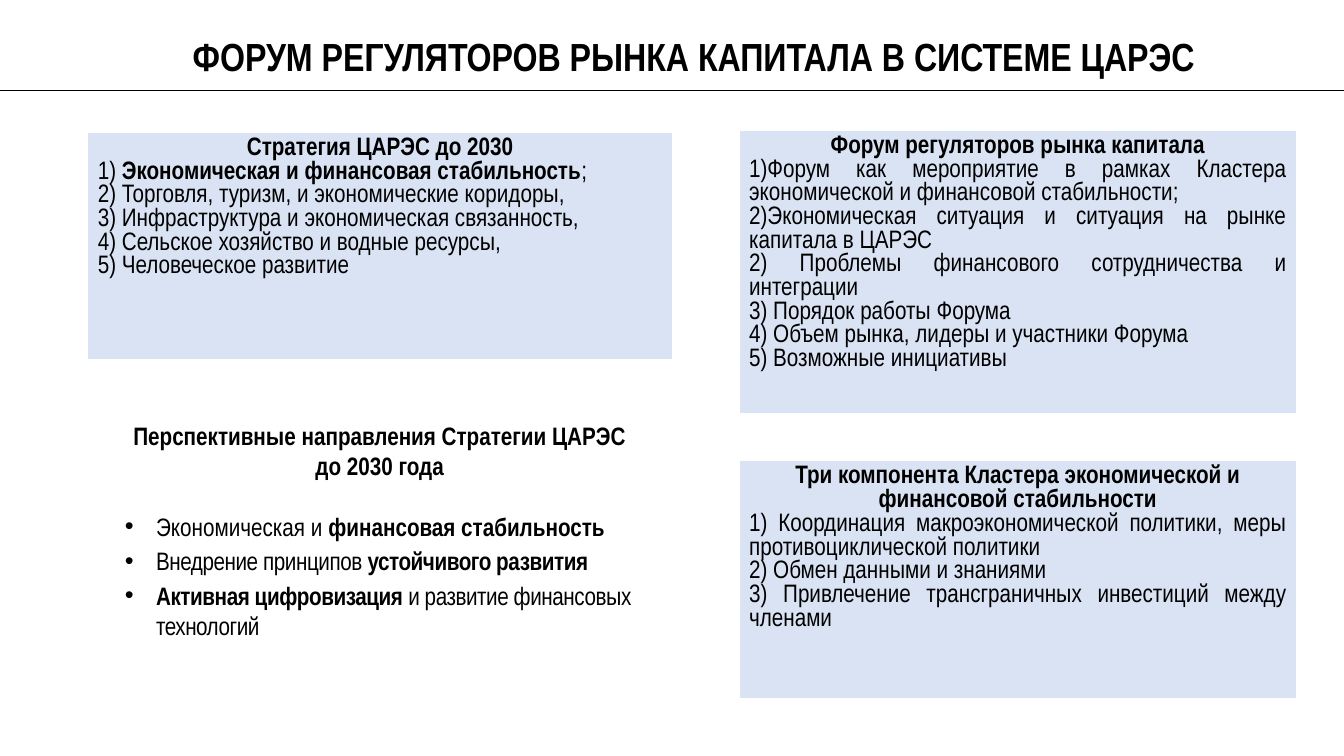
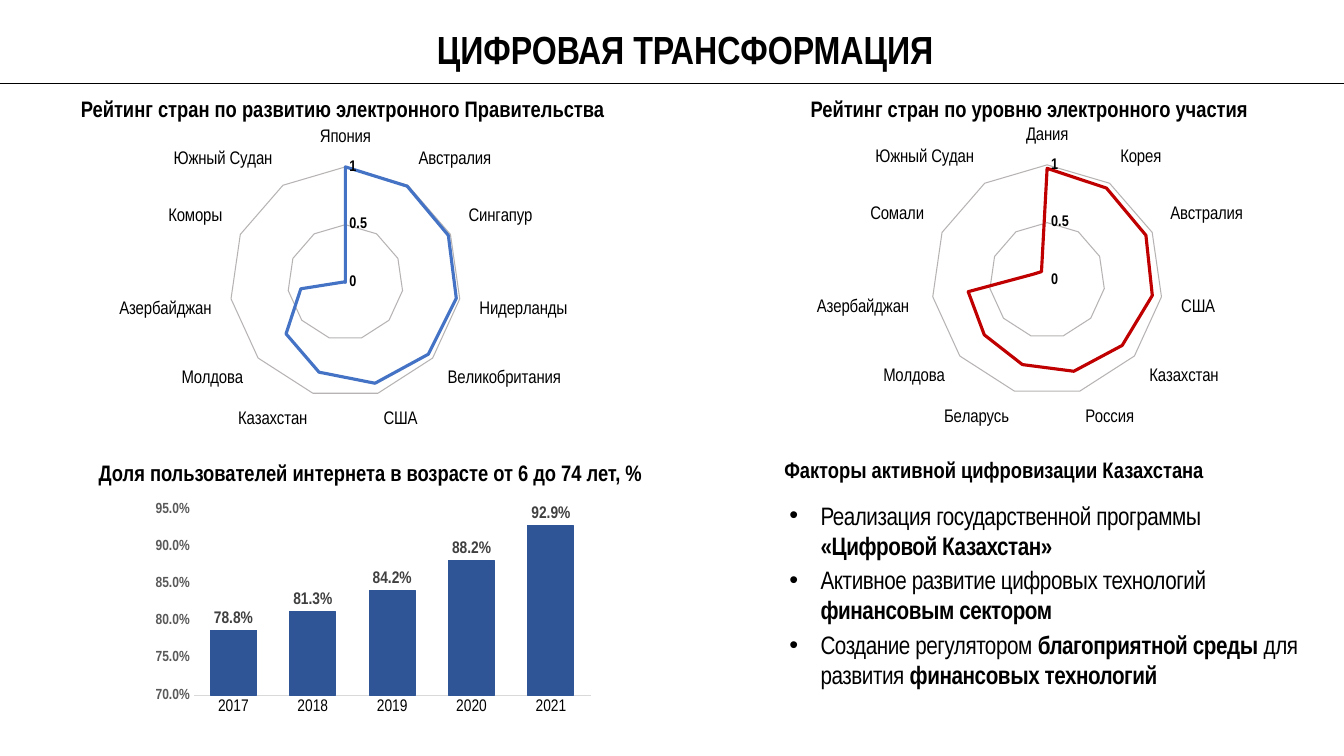
from lxml.etree import SubElement
from pptx import Presentation
from pptx.chart.data import CategoryChartData
from pptx.dml.color import RGBColor
from pptx.enum.chart import XL_CHART_TYPE, XL_LABEL_POSITION, XL_TICK_LABEL_POSITION, XL_TICK_MARK
from pptx.enum.shapes import MSO_CONNECTOR
from pptx.enum.text import MSO_ANCHOR, MSO_AUTO_SIZE, PP_ALIGN
from pptx.oxml.ns import qn
from pptx.util import Inches, Pt

FONT = "Arial Narrow"
BLACK = RGBColor(0x00, 0x00, 0x00)
WHITE = RGBColor(0xFF, 0xFF, 0xFF)
PANEL = RGBColor(0xDA, 0xE3, 0xF3)
BLUE = RGBColor(0x44, 0x72, 0xC4)
NAVY = RGBColor(0x2F, 0x55, 0x97)
RED = RGBColor(0xC0, 0x00, 0x00)
GRID = RGBColor(0xB7, 0xB3, 0xB3)
AXIS = RGBColor(0xD9, 0xD9, 0xD9)
AXIS_TEXT = RGBColor(0x59, 0x59, 0x59)
LABEL_TEXT = RGBColor(0x40, 0x40, 0x40)
HEADING_INSETS = (0.14, 0, 0.14, 0.24)


def style_font(font, size, color=BLACK, bold=False):
    font.name, font.size, font.bold = FONT, Pt(size), bold
    font.color.rgb = color


def add_text(p, text, size=18, bold=False, align=None, spc=0, line=None, before=None, after=None):
    p.alignment = align
    if line:
        p.line_spacing = line
    if before is not None:
        p.space_before = Pt(before)
    if after is not None:
        p.space_after = Pt(after)
    for i, part in enumerate(text.split("**")):
        if part:
            r = p.add_run()
            r.text = part
            style_font(r.font, size, bold=bold or i % 2 == 1)
            if spc:
                r._r.get_or_add_rPr().set("spc", str(round(spc * 100)))


def add_bullet(p, left, indent, kind, **attrs):
    pPr = p._p.get_or_add_pPr()
    pPr.set("marL", str(Inches(left)))
    pPr.set("indent", str(Inches(indent)))
    if kind == "buChar":
        SubElement(pPr, qn("a:buFont"), typeface="Arial")
    SubElement(pPr, qn("a:" + kind), **attrs)


def text_frame(s, box, insets=(0.1, 0.05, 0.1, 0.05), anchor=MSO_ANCHOR.TOP):
    tf = s.shapes.add_textbox(*map(Inches, box)).text_frame
    tf.word_wrap = True
    tf.auto_size = MSO_AUTO_SIZE.NONE
    tf.vertical_anchor = anchor
    tf.margin_left, tf.margin_top, tf.margin_right, tf.margin_bottom = map(Inches, insets)
    return tf


def add_heading(s, text, box, size=16):
    p = text_frame(s, box, HEADING_INSETS).paragraphs[0]
    add_text(p, text, size, bold=True, align=PP_ALIGN.CENTER)
    before = SubElement(p._p.get_or_add_pPr(), qn("a:spcBef"))
    SubElement(before, qn("a:spcPct"), val="20000")


def add_rule(s, y):
    rule = s.shapes.add_connector(MSO_CONNECTOR.STRAIGHT, 0, Inches(y), Inches(13.33), Inches(y))
    rule.line.color.rgb = BLACK
    rule.line.width = Pt(1)
    SubElement(rule._element.spPr, qn("a:effectLst"))


def add_bullets(s, box, items, tight_from=0):
    tf = text_frame(s, box)
    for i, item in enumerate(items):
        p = tf.add_paragraph() if i else tf.paragraphs[0]
        add_text(p, item, after=3, spc=-0.3 if i >= tight_from else 0)
        add_bullet(p, 0.31, -0.31, "buChar", char="•")


def add_panel(s, box, heading, items, numbered=0):
    table = s.shapes.add_table(1, 1, *map(Inches, box)).table
    table.first_row = table.horz_banding = False
    cell = table.cell(0, 0)
    tcPr = cell._tc.get_or_add_tcPr()
    for side, width in (("lnL", 1), ("lnR", 1), ("lnT", 1), ("lnB", 3)):
        ln = SubElement(tcPr, qn("a:" + side), w=str(Pt(width)))
        SubElement(SubElement(ln, qn("a:solidFill")), qn("a:srgbClr"), val=str(WHITE))
    cell.fill.solid()
    cell.fill.fore_color.rgb = PANEL
    tf = cell.text_frame
    add_text(tf.paragraphs[0], heading, bold=True, align=PP_ALIGN.CENTER)
    for i, item in enumerate(items):
        p = tf.add_paragraph()
        add_text(p, item, align=PP_ALIGN.JUSTIFY)
        if i < numbered:
            add_bullet(p, 0, -0.38, "buAutoNum", type="arabicParenR")


def add_chart(s, box, kind, values, color, line_width, cat_size, val_font, scale, fmt):
    data = CategoryChartData()
    data.categories = list(values)
    data.add_series("Series 1", list(values.values()))
    chart = s.shapes.add_chart(kind, *map(Inches, box), data).chart
    chart.has_legend = chart.has_title = False
    style_font(chart.font, 10)
    plot = chart.plots[0]
    plot.vary_by_categories = False
    series = plot.series[0]
    series.format.line.color.rgb = color
    series.format.line.width = Pt(line_width)
    cat, val = chart.category_axis, chart.value_axis
    style_font(cat.tick_labels.font, cat_size)
    style_font(val.tick_labels.font, *val_font)
    cat.format.line.color.rgb = AXIS
    cat.format.line.width = Pt(0.75)
    val.format.line.fill.background()
    cat.tick_labels.number_format = "General"
    val.tick_labels.number_format = fmt
    val.minimum_scale, val.maximum_scale, val.major_unit = scale
    for axis in (cat, val):
        axis.major_tick_mark = axis.minor_tick_mark = XL_TICK_MARK.NONE
        axis.tick_label_position = XL_TICK_LABEL_POSITION.NEXT_TO_AXIS
        axis.tick_labels.number_format_is_linked = False
        axis.has_major_gridlines = False
    return chart, series


def add_radar(s, box, values, color):
    chart, series = add_chart(s, box, XL_CHART_TYPE.RADAR, values, color, 2.25, 13,
                              (11, BLACK, True), (0, 1, 0.5), "General")
    series.smooth = False
    grid = chart.value_axis.major_gridlines.format.line
    grid.color.rgb = GRID
    grid.width = Pt(0.75)


def add_columns(s, box, values):
    chart, series = add_chart(s, box, XL_CHART_TYPE.COLUMN_CLUSTERED, values, NAVY, 0.75, 12,
                              (10.5, AXIS_TEXT, True), (0.7, 0.95, 0.05), "0.0%")
    plot = chart.plots[0]
    plot.gap_width, plot.overlap = 72, -2
    series.format.fill.solid()
    series.format.fill.fore_color.rgb = NAVY
    labels = series.data_labels
    labels.show_value = True
    labels.number_format, labels.number_format_is_linked = "0.0%", False
    labels.position = XL_LABEL_POSITION.OUTSIDE_END
    style_font(labels.font, 12, LABEL_TEXT, True)
    area = chart._chartSpace.chart.plotArea
    for old in area.findall(qn("c:layout")):
        area.remove(old)
    layout = SubElement(area, qn("c:layout"))
    area.insert(0, layout)
    manual = SubElement(layout, qn("c:manualLayout"))
    for tag, val in (("layoutTarget", "inner"), ("xMode", "edge"), ("yMode", "edge"),
                     ("x", "0.113"), ("y", "0.068"), ("w", "0.869"), ("h", "0.816")):
        SubElement(manual, qn("c:" + tag), val=val)


def build_forum(s):
    tf = text_frame(s, (0.55, 0.19, 12.66, 0.79), anchor=MSO_ANCHOR.MIDDLE)
    add_text(tf.paragraphs[0], "ФОРУМ РЕГУЛЯТОРОВ РЫНКА КАПИТАЛА В СИСТЕМЕ ЦАРЭС", 28,
             bold=True, align=PP_ALIGN.CENTER, line=0.9, before=10)
    add_rule(s, 0.9)
    add_panel(s, (0.87, 1.31, 5.8, 2.27), "Стратегия ЦАРЭС до 2030", [
        "1) **Экономическая и финансовая стабильность**;",
        "2) Торговля, туризм, и экономические коридоры,",
        "3) Инфраструктура и экономическая связанность,",
        "4) Сельское хозяйство и водные ресурсы,",
        "5) Человеческое развитие"])
    add_panel(s, (7.33, 1.29, 5.53, 2.83), "Форум регуляторов рынка капитала", [
        "Форум как мероприятие в рамках Кластера экономической и финансовой стабильности;",
        "Экономическая ситуация и ситуация на рынке капитала в ЦАРЭС",
        "2) Проблемы финансового сотрудничества и интеграции",
        "3) Порядок работы Форума",
        "4) Объем рынка, лидеры и участники Форума",
        "5) Возможные инициативы"], numbered=2)
    add_panel(s, (7.33, 4.57, 5.53, 2.37),
              "Три компонента Кластера экономической и финансовой стабильности", [
        "1) Координация макроэкономической политики, меры противоциклической политики",
        "2) Обмен данными и знаниями",
        "3) Привлечение трансграничных инвестиций между членами"])
    add_bullets(s, (1.14, 5.02, 5.25, 1.4), [
        "Экономическая и **финансовая стабильность**",
        "Внедрение принципов **устойчивого развития**",
        "**Активная цифровизация **и развитие финансовых технологий"], tight_from=1)
    add_heading(s, "Перспективные направления Стратегии ЦАРЭС до 2030 года",
                (1.14, 4.17, 5.25, 0.85), 18)


def build_digital(s):
    add_rule(s, 0.83)
    add_heading(s, "ЦИФРОВАЯ ТРАНСФОРМАЦИЯ", (3.02, 0.25, 7.55, 0.72), 28)
    add_radar(s, (7.62, 1.21, 5.19, 3.09), {
        "Дания": 0.97, "Корея": 0.95, "Австралия": 0.94, "США": 0.92, "Казахстан": 0.86,
        "Россия": 0.82, "Беларусь": 0.76, "Молдова": 0.72, "Азербайджан ": 0.69,
        "Сомали": 0.13, "Южный Судан": 0.09}, RED)
    add_radar(s, (0.81, 1.23, 5.19, 3.09), {
        "Япония": 1, "Австралия": 0.99, "Сингапур": 0.98, "Нидерланды": 0.97,
        "Великобритания": 0.95, "США": 0.91, "Казахстан": 0.81, "Молдова": 0.68,
        "Азербайджан": 0.39, "Коморы": 0.01, "Южный Судан": 0}, BLUE)
    add_columns(s, (1.41, 4.91, 4.53, 2.25), {
        "2017": 0.788, "2018": 0.813, "2019": 0.842, "2020": 0.882, "2021": 0.929})
    for text, box in (
            ("Рейтинг стран по развитию электронного Правительства", (0.04, 0.94, 6.72, 0.51)),
            ("Рейтинг стран по уровню электронного участия", (7.71, 0.94, 5, 0.51)),
            ("Доля пользователей интернета в возрасте от 6 до 74 лет, %", (0.69, 4.55, 5.97, 0.51)),
            ("Факторы активной цифровизации Казахстана ", (7.06, 4.52, 5.65, 0.51))):
        add_heading(s, text, box)
    add_bullets(s, (7.73, 4.91, 5.25, 2), [
        "Реализация государственной программы **«Цифровой Казахстан»**",
        "Активное развитие цифровых технологий **финансовым сектором**",
        "Создание регулятором **благоприятной среды **для развития **финансовых технологий**"])


def main():
    prs = Presentation()
    prs.slide_width, prs.slide_height = Inches(13.33), Inches(7.5)
    for build in (build_forum, build_digital):
        build(prs.slides.add_slide(prs.slide_layouts[6]))
    prs.save("out.pptx")


if __name__ == "__main__":
    main()
